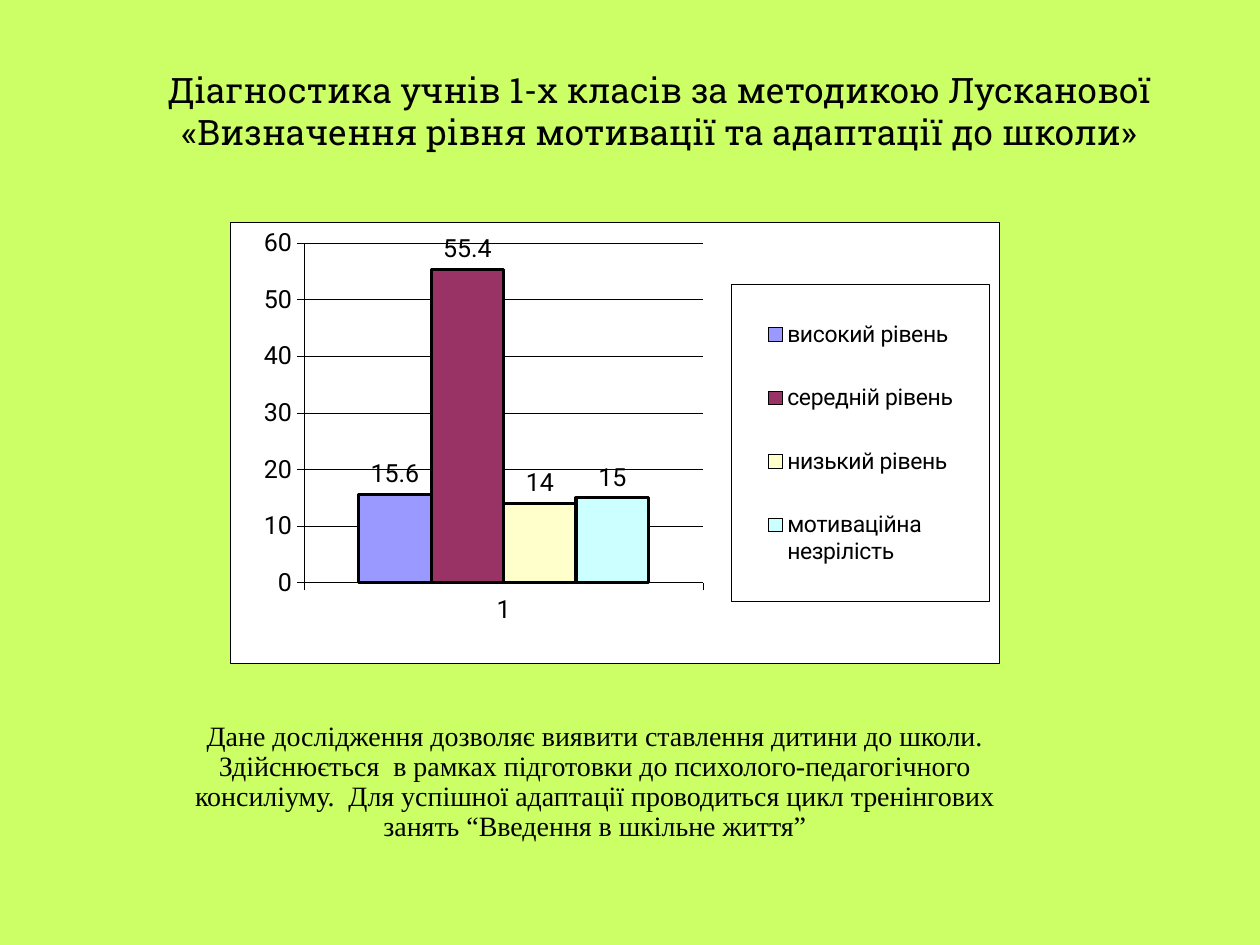
from dataclasses import dataclass

from lxml.etree import SubElement, fromstring
from pptx import Presentation
from pptx.chart.data import CategoryChartData
from pptx.dml.color import RGBColor
from pptx.enum.chart import XL_CHART_TYPE as ChartType
from pptx.enum.chart import XL_LABEL_POSITION as LabelPos
from pptx.enum.chart import XL_LEGEND_POSITION as LegendPos
from pptx.enum.chart import XL_TICK_MARK as Tick
from pptx.enum.text import MSO_ANCHOR as Anchor
from pptx.enum.text import PP_ALIGN as Align
from pptx.oxml.ns import nsdecls, qn
from pptx.util import Emu, Pt

BLACK = RGBColor(0x00, 0x00, 0x00)
WHITE = RGBColor(0xFF, 0xFF, 0xFF)
LIME = RGBColor(0xCC, 0xFF, 0x66)
PERIWINKLE = RGBColor(0x99, 0x99, 0xFF)
PLUM = RGBColor(0x99, 0x33, 0x66)
CREAM = RGBColor(0xFF, 0xFF, 0xCC)
ICE = RGBColor(0xCC, 0xFF, 0xFF)

PX_PER_INCH = 126
HAIRLINE = Pt(0.45)
CHART_FONT = "Roboto"


@dataclass(frozen=True)
class Box:
    x: int
    y: int
    w: int
    h: int

    def emu(self) -> tuple:
        return tuple(px(v) for v in (self.x, self.y, self.w, self.h))


@dataclass(frozen=True)
class TextBlock:
    box: Box
    text: str
    font: str
    size: int
    anchor: Anchor
    line_spacing: float = 1.0
    top_inset: int = 6


@dataclass(frozen=True)
class Level:
    name: str
    value: float
    color: RGBColor


TEXTS = [
    TextBlock(Box(124, 26, 1071, 169),
              "Діагностика учнів 1-х класів за методикою Лусканової "
              "«Визначення рівня мотивації та адаптації до школи»",
              "Roboto Slab", 20, Anchor.MIDDLE),
    TextBlock(Box(154, 680, 882, 169),
              "Дане дослідження дозволяє виявити ставлення дитини до школи. "
              "Здійснюється  в рамках підготовки до психолого-педагогічного "
              "консиліуму.  Для успішної адаптації проводиться цикл тренінгових "
              "занять “Введення в шкільне життя”",
              "Times New Roman", 16, Anchor.TOP, 0.9, 42),
]
LEVELS = [
    Level("високий рівень", 15.6, PERIWINKLE),
    Level("середній рівень", 55.4, PLUM),
    Level("низький рівень", 14, CREAM),
    Level("мотиваційна незрілість", 15, ICE),
]
CHART = Box(230, 222, 770, 442)
PLOT = Box(304, 243, 399, 340)
LEGEND = Box(732, 284, 258, 318)


def px(n: int) -> Emu:
    return Emu(round(n * 914400 / PX_PER_INCH))


def set_font(font, name: str, size: float) -> None:
    font.name, font.size, font.bold = name, Pt(size), False
    font.color.rgb = BLACK


def set_line(line, width=HAIRLINE) -> None:
    line.color.rgb = BLACK
    line.width = width


def add_text(s, block: TextBlock) -> None:
    tf = s.shapes.add_textbox(*block.box.emu()).text_frame
    tf.word_wrap = True
    tf.vertical_anchor = block.anchor
    tf.margin_top = px(block.top_inset)
    p = tf.paragraphs[0]
    p.alignment = Align.CENTER
    p.line_spacing = block.line_spacing
    r = p.add_run()
    r.text = block.text
    set_font(r.font, block.font, block.size)


def manual_layout(box: Box, inner: bool = False):
    """Return a c:layout that places box as fractions of the chart."""
    layout = fromstring(f"<c:layout {nsdecls('c')}/>")
    manual = SubElement(layout, qn("c:manualLayout"))
    values = [("layoutTarget", "inner")] if inner else []
    values += [("xMode", "edge"), ("yMode", "edge"),
               ("x", (box.x - CHART.x) / CHART.w),
               ("y", (box.y - CHART.y) / CHART.h),
               ("w", box.w / CHART.w), ("h", box.h / CHART.h)]
    for tag, value in values:
        SubElement(manual, qn(f"c:{tag}")).set("val", str(value))
    return layout


def white_frame():
    """Return a c:spPr with a white fill and a thin black border."""
    return fromstring(
        f"<c:spPr {nsdecls('c', 'a')}>"
        f'<a:solidFill><a:srgbClr val="{WHITE}"/></a:solidFill>'
        f'<a:ln w="{HAIRLINE}"><a:solidFill><a:srgbClr val="{BLACK}"/>'
        "</a:solidFill></a:ln></c:spPr>")


def style_axes(chart) -> None:
    for axis in (chart.category_axis, chart.value_axis):
        axis.major_tick_mark, axis.minor_tick_mark = Tick.OUTSIDE, Tick.NONE
        set_line(axis.format.line)
        set_font(axis.tick_labels.font, CHART_FONT, 14.3)
    axis = chart.value_axis
    axis.minimum_scale, axis.maximum_scale, axis.major_unit = 0, 60, 10
    axis.has_major_gridlines = True
    set_line(axis.major_gridlines.format.line)


def style_bars(plot) -> None:
    plot.gap_width, plot.overlap = 150, 0
    plot.vary_by_categories = False
    for series, level in zip(plot.series, LEVELS):
        series.format.fill.solid()
        series.format.fill.fore_color.rgb = level.color
        set_line(series.format.line, Pt(1.78))
        labels = series.data_labels
        labels.show_value = True
        labels.position = LabelPos.OUTSIDE_END
        set_font(labels.font, CHART_FONT, 14.3)


def style_legend(chart) -> None:
    chart.has_legend = True
    legend = chart.legend
    legend.position = LegendPos.RIGHT
    legend.include_in_layout = False
    set_font(legend.font, CHART_FONT, 13.1)
    element = legend._element
    for old in element.findall(qn("c:layout")):
        element.remove(old)
    element.find(qn("c:legendPos")).addnext(manual_layout(LEGEND))
    element.find(qn("c:overlay")).addnext(white_frame())


def add_level_chart(s) -> None:
    data = CategoryChartData()
    data.categories = ["1"]
    for level in LEVELS:
        data.add_series(level.name, [level.value])
    chart = s.shapes.add_chart(
        ChartType.COLUMN_CLUSTERED, *CHART.emu(), data).chart
    chart.has_title = False
    set_font(chart.font, CHART_FONT, 14.3)
    style_axes(chart)
    style_bars(chart.plots[0])
    style_legend(chart)
    root = chart._chartSpace.find(qn("c:chart"))
    root.addnext(white_frame())
    area = root.find(qn("c:plotArea"))
    for old in area.findall(qn("c:layout")):
        area.remove(old)
    area.insert(0, manual_layout(PLOT, inner=True))


def main() -> None:
    prs = Presentation()
    prs.slide_width, prs.slide_height = px(1260), px(945)
    s = prs.slides.add_slide(prs.slide_layouts[6])
    s.background.fill.solid()
    s.background.fill.fore_color.rgb = LIME
    for block in TEXTS:
        add_text(s, block)
    add_level_chart(s)
    prs.save("out.pptx")


if __name__ == "__main__":
    main()
